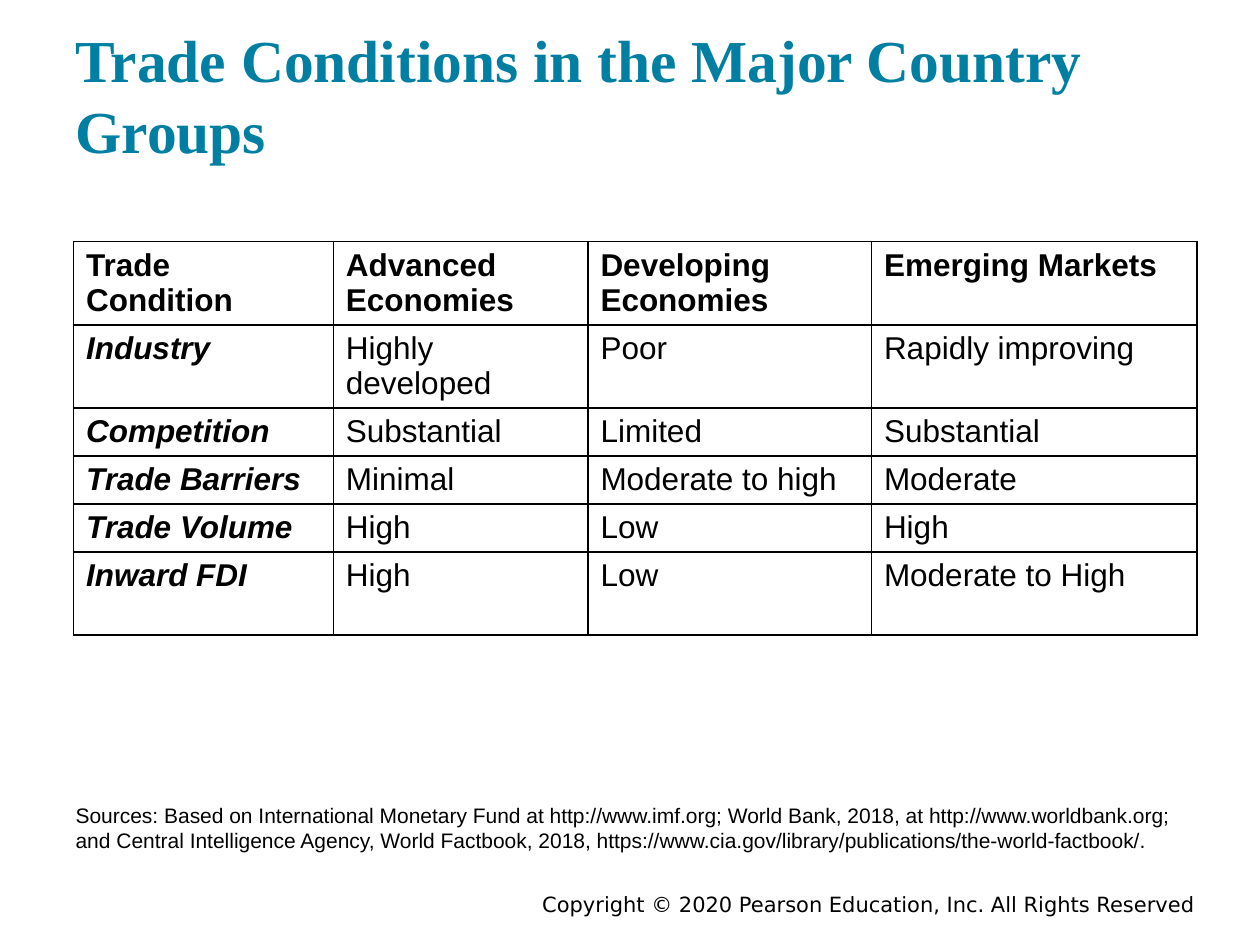
from dataclasses import dataclass

from lxml.etree import SubElement
from pptx import Presentation
from pptx.dml.color import RGBColor
from pptx.enum.text import MSO_ANCHOR, MSO_AUTO_SIZE, PP_ALIGN
from pptx.oxml.ns import qn
from pptx.util import Pt


@dataclass(frozen=True)
class Theme:
    title_color: RGBColor = RGBColor(0x00, 0x7F, 0xA3)
    text_color: RGBColor = RGBColor(0x00, 0x00, 0x00)
    border_color: str = "000000"
    title_font: str = "Times New Roman"
    body_font: str = "Arial"
    footer_font: str = "DejaVu Sans"
    title_size: int = 34
    table_size: int = 18
    small_size: int = 12


class SlideBuilder:
    """Add styled elements to one slide."""

    def __init__(self, slide, theme):
        self.slide = slide
        self.theme = theme

    def style(self, paragraph, name, size, color, bold=False, italic=False):
        paragraph.space_before = Pt(0)
        for run in paragraph.runs:
            font = run.font
            font.name, font.size = name, Pt(size)
            font.bold, font.italic = bold, italic
            font.color.rgb = color

    def place(self, shape, text, left, top, width, height, anchor, inset):
        shape.left, shape.top = Pt(left), Pt(top)
        shape.width, shape.height = Pt(width), Pt(height)
        frame = shape.text_frame
        frame.text = text
        frame.word_wrap = True
        frame.auto_size = MSO_AUTO_SIZE.NONE
        frame.vertical_anchor = anchor
        frame.margin_left = frame.margin_right = Pt(7.2)
        frame.margin_top = frame.margin_bottom = Pt(inset)
        return frame.paragraphs[0]

    def title(self, text, *box):
        paragraph = self.place(self.slide.shapes.title, text, *box, MSO_ANCHOR.BOTTOM, 7.2)
        paragraph.alignment = PP_ALIGN.LEFT
        theme = self.theme
        self.style(paragraph, theme.title_font, theme.title_size, theme.title_color, bold=True)

    def sources(self, text, *box):
        paragraph = self.place(self.slide.placeholders[1], text, *box, MSO_ANCHOR.BOTTOM, 7.2)
        properties = paragraph._p.get_or_add_pPr()
        properties.set("marL", "0")
        properties.set("indent", "0")
        SubElement(properties, qn("a:buNone"))
        theme = self.theme
        self.style(paragraph, theme.body_font, theme.small_size, theme.text_color)

    def footer(self, text, *box):
        shape = self.slide.shapes.add_textbox(0, 0, 0, 0)
        paragraph = self.place(shape, text, *box, MSO_ANCHOR.TOP, 3.6)
        paragraph.alignment = PP_ALIGN.RIGHT
        theme = self.theme
        self.style(paragraph, theme.footer_font, theme.small_size, theme.text_color)

    def border(self, cell):
        properties = cell._tc.get_or_add_tcPr()
        for side in ("a:lnL", "a:lnR", "a:lnT", "a:lnB"):
            line = SubElement(properties, qn(side), w=str(Pt(1)))
            fill = SubElement(line, qn("a:solidFill"))
            SubElement(fill, qn("a:srgbClr"), val=self.theme.border_color)

    def table(self, rows, left, top, widths, heights):
        frame = self.slide.shapes.add_table(
            len(rows), len(widths), Pt(left), Pt(top), Pt(sum(widths)), Pt(sum(heights))
        )
        table = frame.table
        table.first_row = table.horz_banding = False
        for column, width in zip(table.columns, widths):
            column.width = Pt(width)
        theme = self.theme
        for row_index, (values, height) in enumerate(zip(rows, heights)):
            table.rows[row_index].height = Pt(height)
            for column_index, value in enumerate(values):
                cell = table.cell(row_index, column_index)
                cell.text = value
                is_header = row_index == 0
                is_label = column_index == 0
                self.style(
                    cell.text_frame.paragraphs[0],
                    theme.body_font,
                    theme.table_size,
                    theme.text_color,
                    bold=is_header or is_label,
                    italic=is_label and not is_header,
                )
                self.border(cell)
                cell.fill.background()


TRADE_CONDITIONS = [
    ("Trade Condition", "Advanced Economies", "Developing Economies", "Emerging Markets"),
    ("Industry", "Highly developed", "Poor", "Rapidly improving"),
    ("Competition", "Substantial", "Limited", "Substantial"),
    ("Trade Barriers", "Minimal", "Moderate to high", "Moderate"),
    ("Trade Volume", "High", "Low", "High"),
    ("Inward FDI", "High", "Low", "Moderate to High"),
]
SOURCES = (
    "Sources: Based on International Monetary Fund at http://www.imf.org; "
    "World Bank, 2018, at http://www.worldbank.org; and Central Intelligence Agency, "
    "World Factbook, 2018, https://www.cia.gov/library/publications/the-world-factbook/."
)


def main():
    presentation = Presentation()
    presentation.slide_width, presentation.slide_height = Pt(720), Pt(540)
    slide = presentation.slides.add_slide(presentation.slide_layouts[1])
    builder = SlideBuilder(slide, Theme())
    builder.footer(
        "Copyright © 2020 Pearson Education, Inc. All Rights Reserved", 126, 506, 564, 16
    )
    builder.title("Trade Conditions in the Major Country Groups", 36, 18, 648, 84)
    tall, short = 47.6, 27.4
    builder.table(
        TRADE_CONDITIONS,
        42,
        138,
        widths=(148.5, 145.5, 162, 186),
        heights=(tall, tall, short, short, short, tall),
    )
    builder.sources(SOURCES, 36, 422.5, 648, 72)
    presentation.save("out.pptx")


if __name__ == "__main__":
    main()
